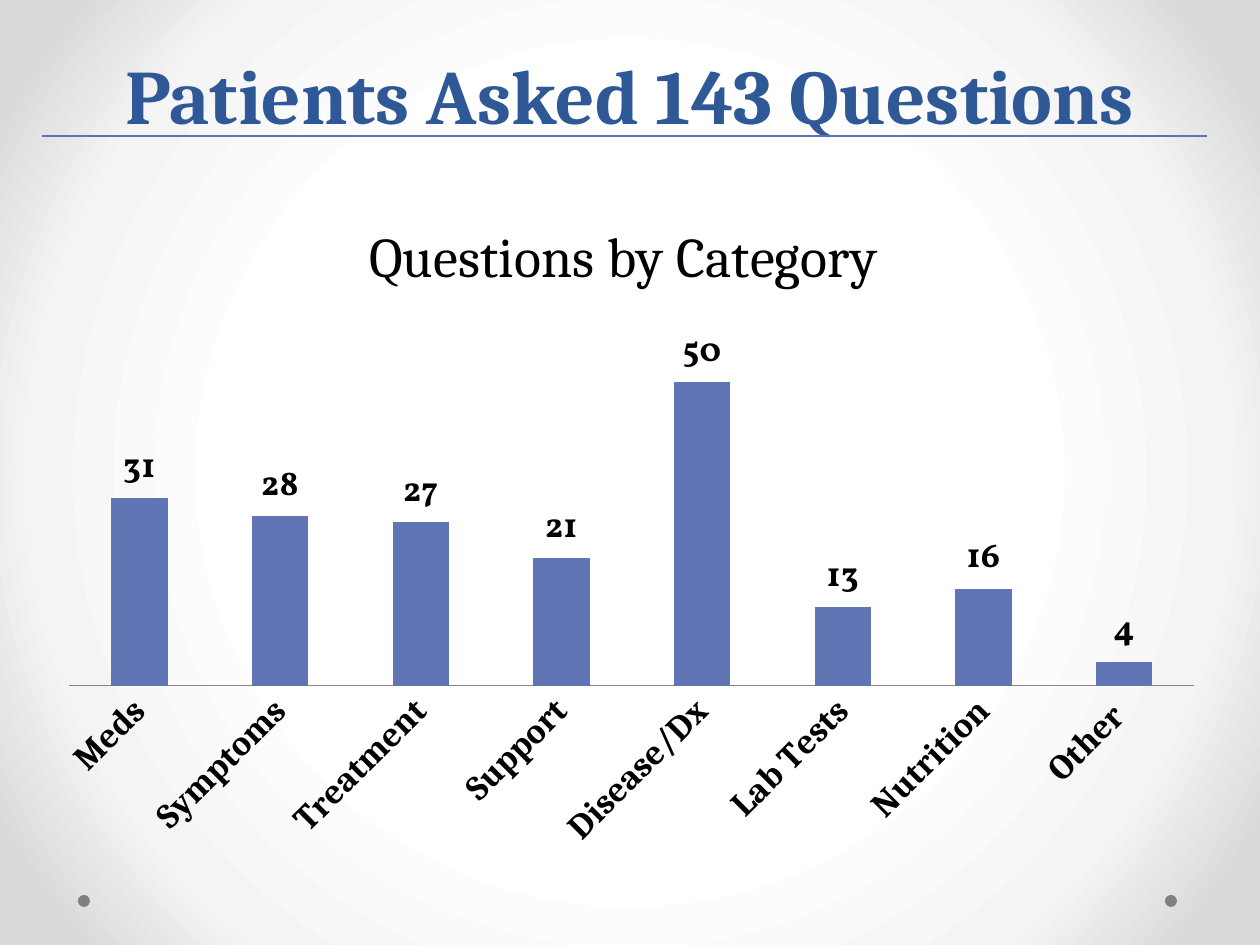
from lxml import etree
from pptx import Presentation
from pptx.chart.data import CategoryChartData
from pptx.dml.color import RGBColor
from pptx.enum import chart as ch, shapes, text
from pptx.oxml.ns import qn
from pptx.util import Pt

TITLE = "Patients Asked 143 Questions"
CHART_TITLE = "Questions by Category "
QUESTIONS = {
    "Meds": 31, "Symptoms": 28, "Treatment": 27, "Support": 21,
    "Disease/Dx": 50, "Lab Tests": 13, "Nutrition": 16, "Other ": 4,
}
COLORS = {"title": "2F5897", "rule": "5C72B2", "bar": "6076B4",
          "dot": "808080", "axis": "868686", "text": "000000"}
BACKDROP = [(50, "FFFFFF"), (76, "F4F4F4"), (92, "DADADA")]
HEADING_FONT, CHART_FONT = "Cambria", "Vollkorn"
DOT_LEFTS, DOT_TOP, DOT_SIZE = (78, 1165), 895, 12


def px(*lengths):
    return [round(length * 914400 / 126) for length in lengths]


def rgb(name):
    return RGBColor.from_string(COLORS[name])


def style(font, size, bold, color="text", name=HEADING_FONT):
    font.size, font.bold, font.name = Pt(size), bold, name
    font.color.rgb = rgb(color)


def paint_backdrop(slide):
    """Fill the background with a circular gradient about the centre."""
    fill = slide.background.fill
    fill.gradient()
    gradient = slide._element.cSld.find(".//" + qn("a:gradFill"))
    for child in list(gradient):
        gradient.remove(child)
    stops = etree.SubElement(gradient, qn("a:gsLst"))
    for position, color in BACKDROP:
        stop = etree.SubElement(stops, qn("a:gs"), pos=str(position * 1000))
        etree.SubElement(stop, qn("a:srgbClr"), val=color)
    circle = etree.SubElement(gradient, qn("a:path"), path="circle")
    etree.SubElement(circle, qn("a:fillToRect"),
                     {side: "50000" for side in "ltrb"})


def add_dots(slide):
    for left in DOT_LEFTS:
        dot = slide.shapes.add_shape(shapes.MSO_SHAPE.OVAL,
                                     *px(left, DOT_TOP, DOT_SIZE, DOT_SIZE))
        dot.shadow.inherit = False
        dot.fill.solid()
        dot.fill.fore_color.rgb = rgb("dot")
        dot.line.fill.background()


def set_title(slide):
    title = slide.shapes.title
    title.left, title.top, title.width, title.height = px(63, 10, 1134, 136)
    frame = title.text_frame
    frame.text = TITLE
    frame.auto_size = text.MSO_AUTO_SIZE.NONE
    frame.vertical_anchor = text.MSO_ANCHOR.BOTTOM
    heading = frame.paragraphs[0]
    heading.alignment = text.PP_ALIGN.CENTER
    heading.line_spacing = Pt(58)
    style(heading.font, 44, True, "title")


def add_question_chart(slide):
    data = CategoryChartData()
    data.categories = list(QUESTIONS)
    data.add_series("Series 1", list(QUESTIONS.values()))
    chart = slide.shapes.add_chart(ch.XL_CHART_TYPE.COLUMN_CLUSTERED,
                                   *px(42, 189, 1176, 672), data).chart
    style(chart.font, 10, False, name=CHART_FONT)
    chart.has_legend = False
    chart.has_title = True
    chart.chart_title.include_in_layout = False
    heading = chart.chart_title.text_frame
    heading.text = CHART_TITLE
    style(heading.paragraphs[0].font, 32, False)

    categories = chart.category_axis
    categories.major_tick_mark = ch.XL_TICK_MARK.NONE
    categories.format.line.color.rgb = rgb("axis")
    categories.format.line.width = Pt(0.75)
    style(categories.tick_labels.font, 20, True)
    categories._element.find(".//" + qn("a:bodyPr")).set("rot", "-2700000")
    chart.value_axis.has_major_gridlines = False
    chart.value_axis.visible = False

    plot = chart.plots[0]
    plot.vary_by_categories = False
    plot.gap_width, plot.overlap = 150, -25
    bars = plot.series[0]
    bars.format.fill.solid()
    bars.format.fill.fore_color.rgb = rgb("bar")
    labels = bars.data_labels
    labels.show_value = True
    labels.position = ch.XL_LABEL_POSITION.OUTSIDE_END
    style(labels.font, 20, True, name=CHART_FONT)


def add_rule(slide):
    rule = slide.shapes.add_connector(shapes.MSO_CONNECTOR.STRAIGHT,
                                      *px(42, 136, 1207, 136))
    rule.line.color.rgb = rgb("rule")
    rule.line.width = Pt(0.75)
    etree.SubElement(rule._element.spPr, qn("a:effectLst"))


def main():
    deck = Presentation()
    deck.slide_width, deck.slide_height = px(1260, 945)
    slide = deck.slides.add_slide(deck.slide_layouts[5])
    paint_backdrop(slide)
    add_dots(slide)
    set_title(slide)
    add_question_chart(slide)
    add_rule(slide)
    deck.save("out.pptx")


if __name__ == "__main__":
    main()
